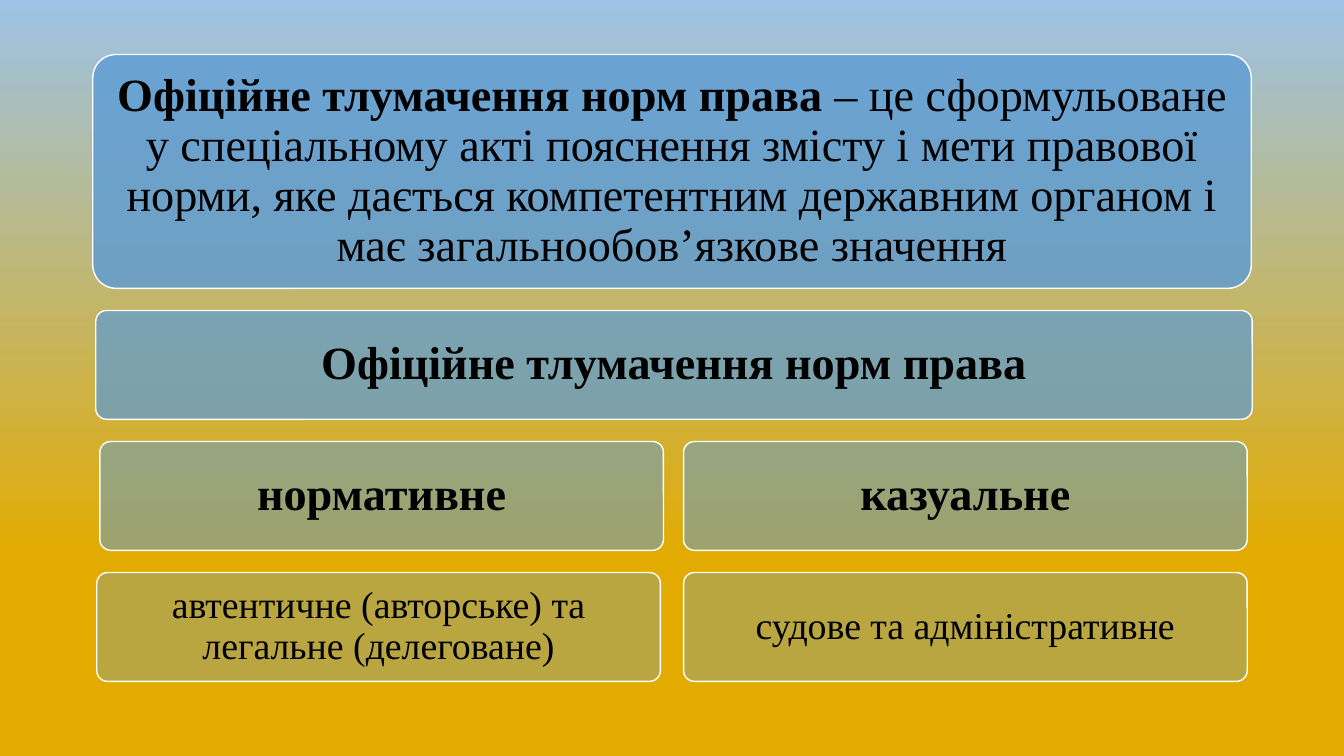
from lxml.etree import SubElement
from pptx import Presentation
from pptx.dml.color import RGBColor
from pptx.enum.shapes import MSO_SHAPE
from pptx.enum.text import MSO_ANCHOR, PP_ALIGN
from pptx.oxml.ns import qn
from pptx.util import Inches, Pt

BLACK = RGBColor(0x00, 0x00, 0x00)
WHITE = RGBColor(0xFF, 0xFF, 0xFF)
BLUE = RGBColor(0x5B, 0x9B, 0xD5)
SKY = RGBColor(0x9D, 0xC3, 0xE6)
GOLD = RGBColor(0xE3, 0xAB, 0x00)

FONT = "Times New Roman"
TERM = "Офіційне тлумачення норм права"
DEFINITION = (
    "– це сформульоване у спеціальному акті пояснення змісту і мети "
    "правової норми, яке дається компетентним державним органом і "
    "має загальнообов’язкове значення"
)

ROW_TOP = 3.08
ROW_STEP = 1.3
ROW_HEIGHT = 1.08
HALF_WIDTH = 5.59
RIGHT_COLUMN = 6.78


def paint_background(slide):
    fill = slide.background.fill
    fill.gradient()
    fill.gradient_angle = 90
    for stop, color, position in zip(fill.gradient_stops, (GOLD, SKY), (0.26, 1)):
        stop.color.rgb = color
        stop.position = position


def set_opacity(shape, percent):
    color = shape.fill._xPr.find(qn("a:solidFill"))[0]
    SubElement(color, qn("a:alpha"), val=str(percent * 1000))


def add_box(slide, left, top, width, height, opacity, runs, size=33, margin=0.14):
    shape = slide.shapes.add_shape(
        MSO_SHAPE.ROUNDED_RECTANGLE,
        Inches(left), Inches(top), Inches(width), Inches(height),
    )
    shape.adjustments[0] = 0.1
    shape.shadow.inherit = False
    shape.fill.solid()
    shape.fill.fore_color.rgb = BLUE
    set_opacity(shape, opacity)
    shape.line.color.rgb = WHITE
    shape.line.width = Pt(1)

    frame = shape.text_frame
    frame.word_wrap = True
    frame.vertical_anchor = MSO_ANCHOR.MIDDLE
    frame.margin_left = frame.margin_right = Inches(margin)
    frame.margin_top = frame.margin_bottom = Inches(margin)
    paragraph = frame.paragraphs[0]
    paragraph.alignment = PP_ALIGN.CENTER
    paragraph.line_spacing = 0.9
    for text, bold in runs:
        run = paragraph.add_run()
        run.text = text
        run.font.name = FONT
        run.font.size = Pt(size)
        run.font.bold = bold
        run.font.color.rgb = BLACK


def add_branch(slide, kind_left, forms_left, kind, forms):
    kind_top = ROW_TOP + ROW_STEP
    forms_top = kind_top + ROW_STEP
    add_box(slide, kind_left, kind_top, HALF_WIDTH, ROW_HEIGHT, 50, [(kind, True)])
    add_box(slide, forms_left, forms_top, HALF_WIDTH, ROW_HEIGHT, 30,
            [(forms, False)], size=27, margin=0.11)


def main():
    presentation = Presentation()
    presentation.slide_width = Inches(13.33)
    presentation.slide_height = Inches(7.5)
    slide = presentation.slides.add_slide(presentation.slide_layouts[6])
    paint_background(slide)

    add_box(slide, 0.92, 0.54, 11.49, 2.32, 80,
            [(TERM + " ", True), (DEFINITION, False)])
    add_box(slide, 0.95, ROW_TOP, 11.47, ROW_HEIGHT, 70, [(TERM, True)])
    add_branch(slide, 0.99, 0.96, "нормативне",
               "автентичне (авторське) та легальне (делеговане)")
    add_branch(slide, RIGHT_COLUMN, RIGHT_COLUMN, "казуальне",
               "судове та адміністративне")

    presentation.save("out.pptx")


main()
